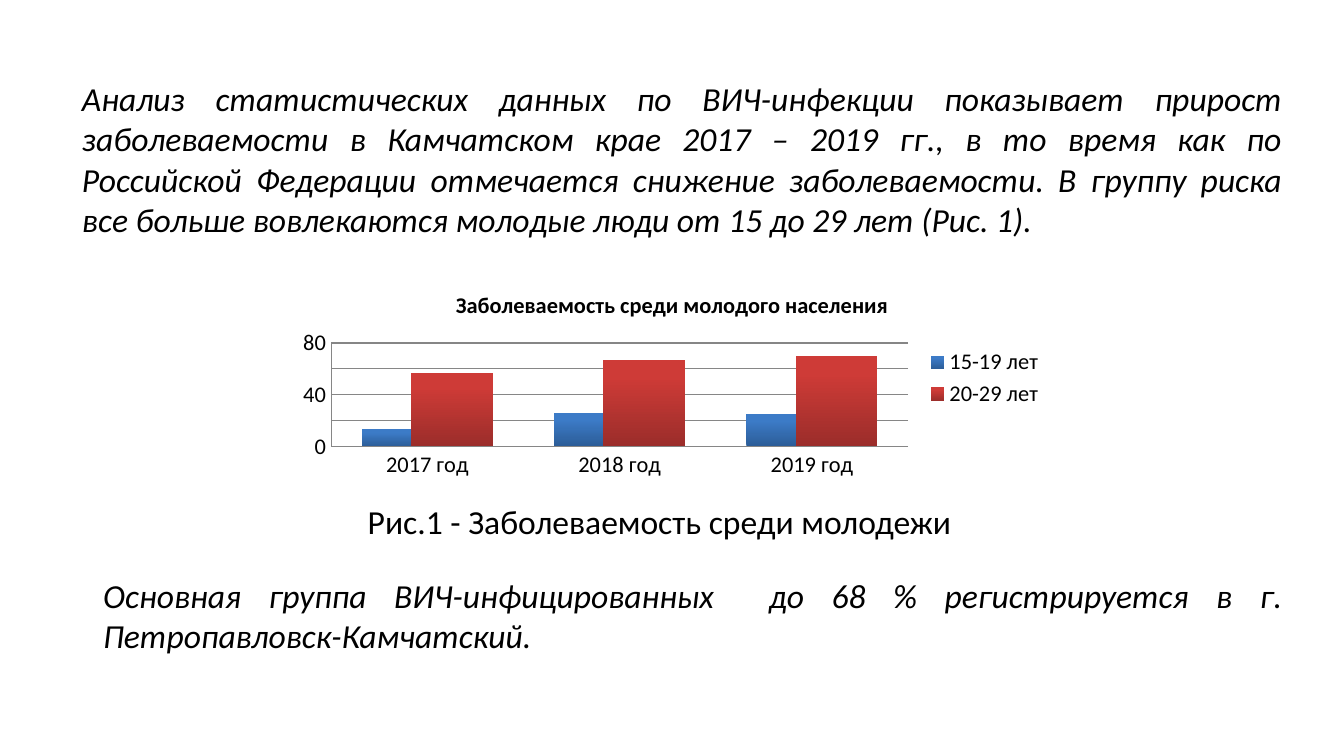
from pptx import Presentation
from pptx.chart.data import CategoryChartData
from pptx.dml.color import RGBColor
from pptx.enum.chart import XL_CHART_TYPE, XL_LEGEND_POSITION, XL_TICK_MARK
from pptx.enum.text import MSO_AUTO_SIZE, PP_ALIGN
from pptx.util import Cm, Pt

COLUMNS = XL_CHART_TYPE.COLUMN_CLUSTERED
LEGEND_RIGHT = XL_LEGEND_POSITION.RIGHT
NO_TICK = XL_TICK_MARK.NONE
GROW = MSO_AUTO_SIZE.SHAPE_TO_FIT_TEXT
LEFT, JUSTIFY = PP_ALIGN.LEFT, PP_ALIGN.JUSTIFY

BLACK = RGBColor(0x00, 0x00, 0x00)
GREY = RGBColor(0x86, 0x86, 0x86)
BLUE_DARK = RGBColor(0x2C, 0x5D, 0x98)
BLUE = RGBColor(0x3C, 0x7B, 0xC7)
RED_DARK = RGBColor(0x9B, 0x2D, 0x2A)
RED = RGBColor(0xCE, 0x3B, 0x37)


class SlideBuilder:
    font_name = "Calibri"
    text_size = Pt(18)
    chart_size = Pt(12)

    def __init__(self, slide):
        self.slide = slide

    def style(self, font, size, bold=False, italic=False):
        font.name = self.font_name
        font.size = size
        font.bold = bold
        font.italic = italic
        font.color.rgb = BLACK

    def text(self, x, y, w, h, text, align=LEFT, italic=False, wrap=True):
        sp = self.slide.shapes.add_textbox(Cm(x), Cm(y), Cm(w), Cm(h))
        tf = sp.text_frame
        tf.word_wrap = wrap
        tf.auto_size = GROW
        tf.text = text
        p = tf.paragraphs[0]
        p.alignment = align
        self.style(p.runs[0].font, self.text_size, italic=italic)

    def column_chart(self, x, y, w, h, title, categories, series):
        data = CategoryChartData()
        data.categories = categories
        for name, values, _ in series:
            data.add_series(name, values)
        chart = self.slide.shapes.add_chart(
            COLUMNS, Cm(x), Cm(y), Cm(w), Cm(h), data).chart
        self.style(chart.font, self.text_size)

        # Title and legend
        chart.has_title = True
        tf = chart.chart_title.text_frame
        tf.text = title
        self.style(tf.paragraphs[0].runs[0].font, self.chart_size, bold=True)
        chart.chart_title.include_in_layout = False
        chart.has_legend = True
        chart.legend.position = LEGEND_RIGHT
        chart.legend.include_in_layout = False
        self.style(chart.legend.font, self.chart_size)

        # Axes
        for axis in (chart.category_axis, chart.value_axis):
            axis.major_tick_mark = axis.minor_tick_mark = NO_TICK
            axis.format.line.color.rgb = GREY
            self.style(axis.tick_labels.font, self.chart_size)
        axis = chart.value_axis
        axis.minimum_scale, axis.maximum_scale, axis.major_unit = 0, 80, 20
        axis.has_major_gridlines = True
        axis.major_gridlines.format.line.color.rgb = GREY

        # Columns, shaded from a dark foot to a lighter top
        plot = chart.plots[0]
        plot.vary_by_categories = False
        plot.gap_width = 75
        plot.overlap = 40
        for column, (_, _, colors) in zip(plot.series, series):
            fill = column.format.fill
            fill.gradient()
            fill.gradient_angle = 90
            for stop, color, position in zip(fill.gradient_stops, colors, (0, 0.8)):
                stop.color.rgb = color
                stop.position = position


def main():
    prs = Presentation()
    prs.slide_width, prs.slide_height = Cm(25.4), Cm(14.29)
    s = SlideBuilder(prs.slides.add_slide(prs.slide_layouts[6]))

    # Introduction
    s.text(1.3, 1.35, 23.19, 3.33,
           "Анализ статистических данных по ВИЧ-инфекции показывает прирост "
           "заболеваемости в Камчатском крае 2017 – 2019 гг., в то время как по "
           "Российской Федерации отмечается снижение заболеваемости. В группу "
           "риска все больше вовлекаются молодые люди от 15 до 29 лет (Рис. 1).",
           JUSTIFY, italic=True)

    # Chart with its caption
    s.column_chart(5.44, 5.18, 14.53, 3.94,
                   "Заболеваемость среди молодого населения",
                   ("2017 год", "2018 год", "2019 год"),
                   (("15-19 лет", (13, 26, 25), (BLUE_DARK, BLUE)),
                    ("20-29 лет", (57, 67, 70), (RED_DARK, RED))))
    s.text(6.7, 9.35, 11.66, 1.02, "Рис.1 - Заболеваемость среди молодежи",
           wrap=False)

    # Conclusion
    s.text(1.7, 10.74, 22.8, 1.8,
           "Основная группа ВИЧ-инфицированных  до 68 % регистрируется в "
           "г. Петропавловск-Камчатский.", JUSTIFY, italic=True)

    prs.save("out.pptx")


if __name__ == "__main__":
    main()
